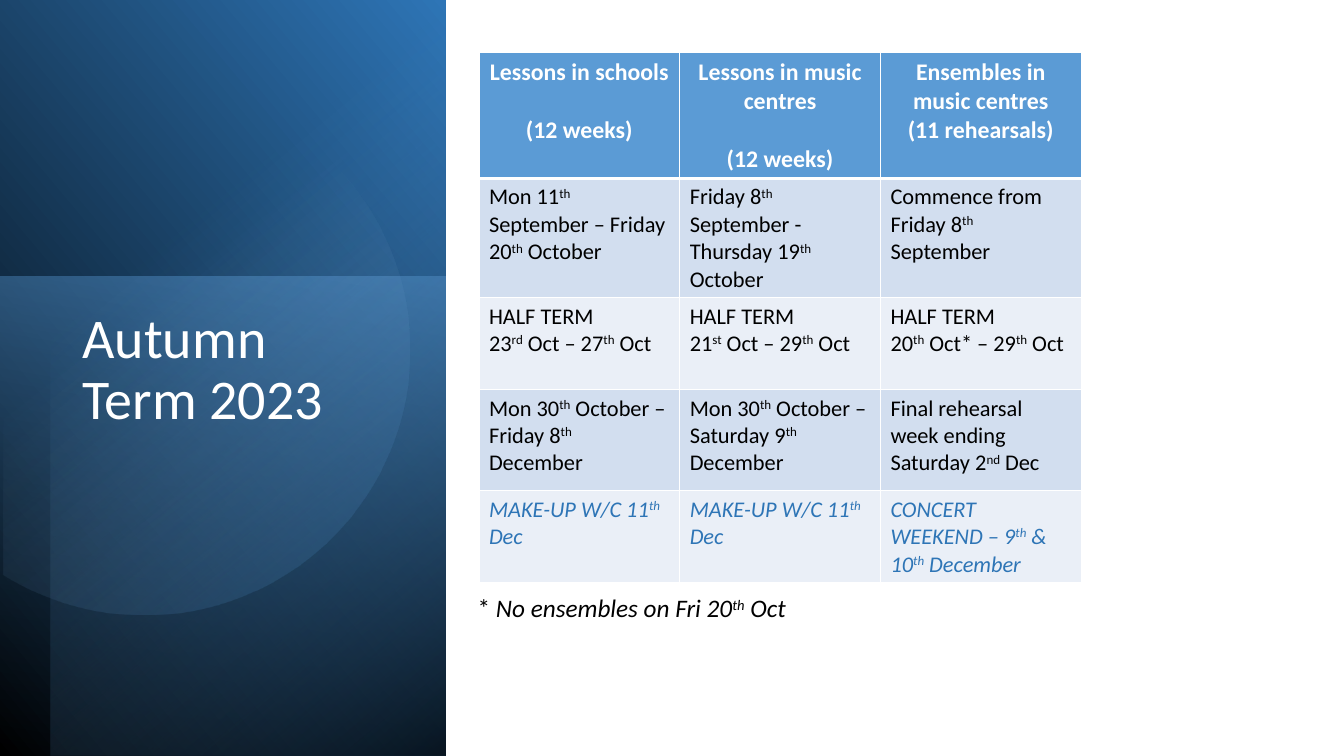
from math import cos, radians, sin

from lxml import etree
from pptx import Presentation
from pptx.dml.color import RGBColor
from pptx.enum.shapes import MSO_SHAPE
from pptx.enum.text import PP_ALIGN
from pptx.oxml import parse_xml
from pptx.oxml.ns import nsdecls, qn
from pptx.util import Cm, Pt

RECTANGLE = MSO_SHAPE.RECTANGLE
CENTER = PP_ALIGN.CENTER
LEFT = PP_ALIGN.LEFT
WHITE, BLACK, BLUE, DEEP_BLUE = "FFFFFF", "000000", "5B9BD5", "2E75B6"


def write(paragraph, text, size, color=BLACK, bold=False, italic=False, align=LEFT):
    """Add text to a paragraph; parts between ^ marks become superscript."""
    paragraph.alignment = align
    for index, part in enumerate(text.split("^")):
        run = paragraph.add_run()
        run.text = part
        run.font.name = "Calibri"
        run.font.size = Pt(size)
        run.font.bold = bold
        run.font.italic = italic
        run.font.color.rgb = RGBColor.from_string(color)
        if index % 2:
            run.font._element.set("baseline", "30000")


def paint_gradient(shape, stops, angle):
    """Fill with (position, colour, opacity) stops, clockwise angle, no line or shadow."""
    shape.shadow.inherit = False
    shape.line.fill.background()
    stop_xml = "".join(
        f'<a:gs pos="{position * 1000}"><a:srgbClr val="{color}">'
        f'<a:alpha val="{opacity * 1000}"/></a:srgbClr></a:gs>'
        for position, color, opacity in stops
    )
    gradient = parse_xml(
        f'<a:gradFill rotWithShape="1" {nsdecls("a")}><a:gsLst>{stop_xml}</a:gsLst>'
        f'<a:lin ang="{angle * 60000}" scaled="0"/></a:gradFill>'
    )
    shape.line._ln.addprevious(gradient)


presentation = Presentation()
presentation.slide_width = Cm(33.87)
presentation.slide_height = Cm(19.05)
slide = presentation.slides.add_slide(presentation.slide_layouts[6])

# Left panel: visible left, top, width, height; rotation; flip; stops; angle
PANEL_LAYERS = [
    (0, 0, 11.23, 19.05, 90, True, [(0, BLACK, 100), (100, DEEP_BLUE, 100)], 310),
    (0, 6.96, 11.23, 12.09, 270, False, [(0, BLUE, 50), (100, "1F4E79", 0)], 190),
    (1.27, 0, 9.96, 19.05, 270, True, [(0, BLACK, 59), (69, BLUE, 0)], 220),
]
for left, top, width, height, rotation, flipped, stops, angle in PANEL_LAYERS:
    # A quarter turn swaps width and height around the same centre
    offset = (height - width) / 2
    layer = slide.shapes.add_shape(
        RECTANGLE, Cm(left - offset), Cm(top + offset), Cm(height), Cm(width)
    )
    layer.rotation = rotation
    if flipped:
        layer._element.spPr.xfrm.set("flipH", "1")
    paint_gradient(layer, stops, angle)

# Circle cut off by the left edge of the slide
CIRCLE_X, CIRCLE_Y, RADIUS = 3.63, 8.81, 6.68
outline = [
    (Cm(CIRCLE_X + RADIUS * cos(radians(degrees))),
     Cm(CIRCLE_Y + RADIUS * sin(radians(degrees))))
    for degrees in range(-122, 123, 2)
]
builder = slide.shapes.build_freeform(*outline[0])
builder.add_line_segments(outline[1:], close=True)
circle = builder.convert_to_shape()
paint_gradient(circle, [(39, "9DC3E6", 0), (100, DEEP_BLUE, 26)], 52)

# Title
title = slide.shapes.add_textbox(Cm(1.83), Cm(7.7), Cm(8), Cm(8.53))
title.text_frame.word_wrap = True
title_paragraph = title.text_frame.paragraphs[0]
title_paragraph.line_spacing = 0.9
write(title_paragraph, "Autumn Term 2023", 40, WHITE)

# Term dates
TERM_ROWS = [
    ["Lessons in schools\n(12 weeks)",
     "Lessons in music centres\n(12 weeks)",
     "Ensembles in music centres\n(11 rehearsals)"],
    ["Mon 11^th^ September – Friday 20^th^ October",
     "Friday 8^th^ September - Thursday 19^th^ October",
     "Commence from Friday 8^th^ September"],
    ["HALF TERM\n23^rd^ Oct – 27^th^ Oct",
     "HALF TERM\n21^st^ Oct – 29^th^ Oct",
     "HALF TERM\n20^th^ Oct* – 29^th^ Oct"],
    ["Mon 30^th^ October – Friday 8^th^ December",
     "Mon 30^th^ October – Saturday 9^th^ December",
     "Final rehearsal week ending Saturday 2^nd^ Dec"],
    ["MAKE-UP W/C 11^th^ Dec",
     "MAKE-UP W/C 11^th^ Dec",
     "CONCERT WEEKEND – 9^th^ & 10^th^ December"],
]
ROW_HEIGHTS = [3.18, 3, 2.32, 2.55, 2.32]
ROW_FILLS = [BLUE, "D2DEEF", "EAEFF7", "D2DEEF", "EAEFF7"]
HEADER_FORMAT = {"size": 17, "color": WHITE, "bold": True, "align": CENTER}
DATE_FORMAT = {"size": 16}
MAKE_UP_FORMAT = {"size": 16, "color": DEEP_BLUE, "italic": True}
ROW_FORMATS = [HEADER_FORMAT] + [DATE_FORMAT] * 3 + [MAKE_UP_FORMAT]

table = slide.shapes.add_table(
    5, 3, Cm(12.07), Cm(1.32), Cm(15.18), Cm(sum(ROW_HEIGHTS))
).table
table.horz_banding = False
for column in table.columns:
    column.width = Cm(5.06)
for row_index, row_texts in enumerate(TERM_ROWS):
    table.rows[row_index].height = Cm(ROW_HEIGHTS[row_index])
    border_widths = {
        "a:lnL": 1,
        "a:lnR": 1,
        "a:lnT": 3 if row_index == 1 else 1,
        "a:lnB": 3 if row_index == 0 else 1,
    }
    for column_index, cell_text in enumerate(row_texts):
        cell = table.cell(row_index, column_index)
        properties = cell._tc.get_or_add_tcPr()
        for side, points in border_widths.items():
            border = etree.SubElement(properties, qn(side), w=str(Pt(points)))
            border_fill = etree.SubElement(border, qn("a:solidFill"))
            etree.SubElement(border_fill, qn("a:srgbClr"), val=WHITE)
        cell.fill.solid()
        cell.fill.fore_color.rgb = RGBColor.from_string(ROW_FILLS[row_index])
        for line_index, line in enumerate(cell_text.split("\n")):
            frame = cell.text_frame
            paragraph = frame.add_paragraph() if line_index else frame.paragraphs[0]
            write(paragraph, line, **ROW_FORMATS[row_index])
            if line == "(12 weeks)":
                paragraph.space_before = Pt(20.7)

# Footnote
footnote = slide.shapes.add_textbox(Cm(11.79), Cm(14.81), Cm(8.79), Cm(1.02))
footnote.text_frame.word_wrap = True
footnote_paragraph = footnote.text_frame.paragraphs[0]
write(footnote_paragraph, "* ", 18)
write(footnote_paragraph, "No ensembles on Fri 20^th^ Oct", 18, italic=True)

presentation.save("out.pptx")
